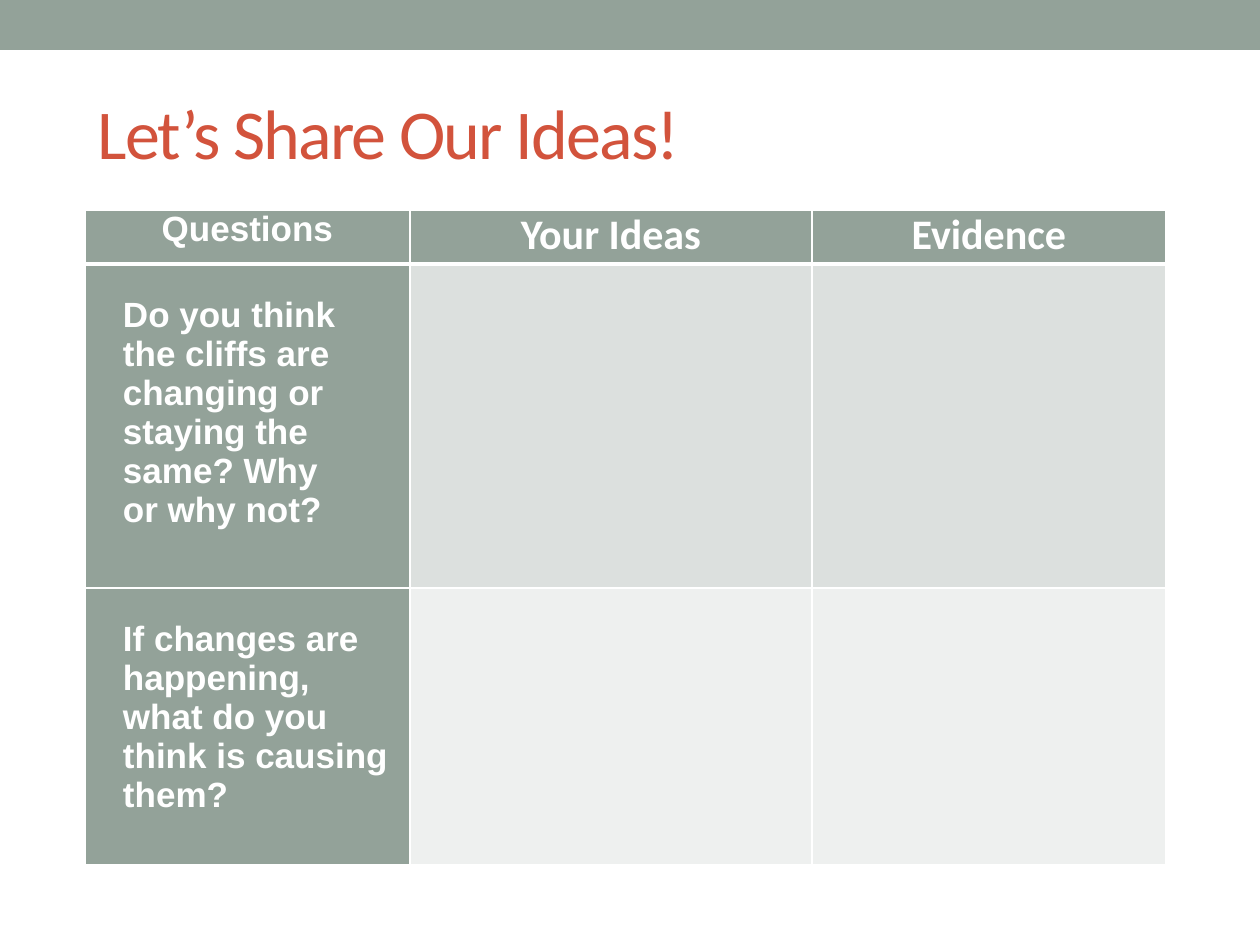
from lxml.etree import SubElement
from pptx import Presentation
from pptx.dml.color import RGBColor
from pptx.enum.shapes import MSO_SHAPE as SHAPE
from pptx.enum.text import MSO_ANCHOR as ANCHOR, MSO_AUTO_SIZE as AUTO, PP_ALIGN as ALIGN
from pptx.oxml.ns import qn
from pptx.util import Emu, Pt

SAGE, RED, WHITE = "93A299", "D2533C", "FFFFFF"
BANDS = ["DCE0DE", "EEF0EF"]
COLS = [325, 402, 354]
ROWS = [54, 324, 277]
HEADERS = [("Questions", "Arial", 20), ("Your Ideas", "Calibri", 24), ("Evidence", "Calibri", 24)]
QUESTIONS = [
    "Do you think \vthe cliffs are changing or staying the same? Why \vor why not?",
    "If changes are happening, what do you think is causing them?",
]


def px(n):
    return Emu(round(n * 914400 / 126))


def rgb(value):
    return RGBColor.from_string(value)


def write(tf, text, font="Arial", size=20, color=WHITE, bold=False, align=ALIGN.LEFT):
    p = tf.paragraphs[0]
    p.text = text
    p.alignment = align
    for r in p.runs:
        r.font.name, r.font.size, r.font.bold = font, Pt(size), bold
        r.font.color.rgb = rgb(color)
    return p


def add_band(slide, x, y, w, h):
    s = slide.shapes.add_shape(SHAPE.RECTANGLE, px(x), px(y), px(w), px(h))
    s.shadow.inherit = False
    s.fill.solid()
    s.fill.fore_color.rgb = rgb(SAGE)
    s.line.fill.background()


def add_title(slide, x, y, w, h):
    s = slide.shapes.title
    s.left, s.top, s.width, s.height = px(x), px(y), px(w), px(h)
    tf = s.text_frame
    tf.auto_size, tf.vertical_anchor = AUTO.NONE, ANCHOR.MIDDLE
    p = write(tf, "Let’s Share Our Ideas!", font="Calibri", size=40, color=RED)
    p.runs[0].font._element.set("spc", "-100")


def style_cell(cell, fill, top=1, bottom=1):
    # Borders come before the fill in the cell properties
    tc_pr = cell._tc.get_or_add_tcPr()
    for side, width in (("L", 1), ("R", 1), ("T", top), ("B", bottom)):
        ln = SubElement(tc_pr, qn(f"a:ln{side}"), w=str(Pt(width)))
        SubElement(SubElement(ln, qn("a:solidFill")), qn("a:srgbClr"), val=WHITE)
    cell.fill.solid()
    cell.fill.fore_color.rgb = rgb(fill)


def set_margins(cell, side, end):
    cell.margin_left = cell.margin_right = px(side)
    cell.margin_top = cell.margin_bottom = px(end)


def add_ideas_table(slide, x, y, w, h):
    table = slide.shapes.add_table(len(ROWS), len(COLS), px(x), px(y), px(w), px(h)).table
    for column, width in zip(table.columns, COLS):
        column.width = px(width)
    for row, height in zip(table.rows, ROWS):
        row.height = px(height)

    # Header row
    for c, (text, font, size) in enumerate(HEADERS):
        cell = table.cell(0, c)
        style_cell(cell, SAGE, bottom=3)
        set_margins(cell, 9, 0)
        write(cell.text_frame, text, font=font, size=size, bold=True, align=ALIGN.CENTER)

    # Question rows with empty answer cells
    for i, (question, band) in enumerate(zip(QUESTIONS, BANDS)):
        for c in range(len(COLS)):
            style_cell(table.cell(i + 1, c), band if c else SAGE, top=1 if i else 3)
        cell = table.cell(i + 1, 0)
        set_margins(cell, 19, 32)
        p = write(cell.text_frame, question, bold=True)
        p_pr = p._p.get_or_add_pPr()
        p_pr.set("marL", str(px(19)))
        p_pr.set("indent", "0")


def main():
    prs = Presentation()
    prs.slide_width, prs.slide_height = px(1260), px(945)
    slide = prs.slides.add_slide(prs.slide_layouts[5])
    add_band(slide, 0, 0, 1260, 50)
    add_title(slide, 85, 85, 1081, 94)
    add_ideas_table(slide, 85, 210, sum(COLS), sum(ROWS))
    prs.save("out.pptx")


if __name__ == "__main__":
    main()
